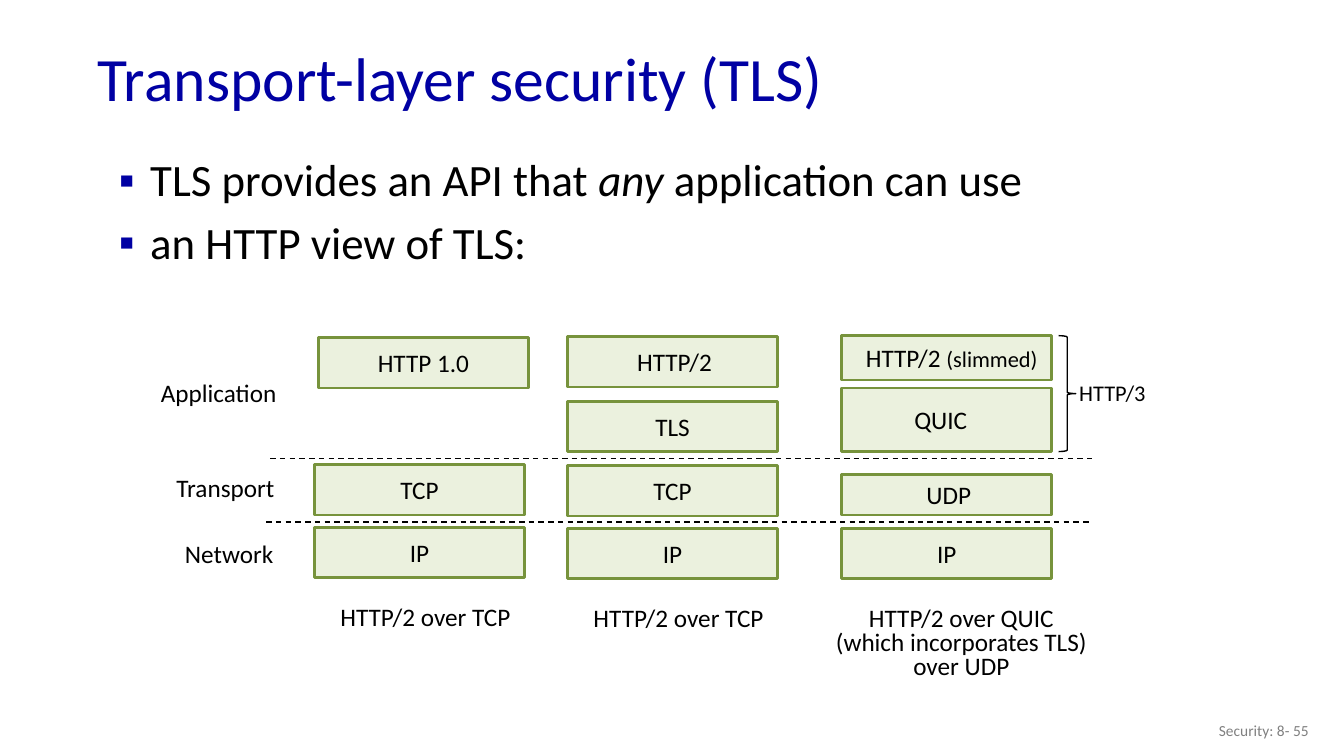
from lxml import etree
from pptx import Presentation
from pptx.dml.color import RGBColor
from pptx.enum.dml import MSO_LINE
from pptx.enum.shapes import MSO_CONNECTOR, MSO_SHAPE
from pptx.enum.text import MSO_ANCHOR, MSO_AUTO_SIZE, PP_ALIGN
from pptx.oxml.ns import qn
from pptx.util import Inches, Pt

NAVY = RGBColor(0x00, 0x00, 0xA3)
BLACK = RGBColor(0x00, 0x00, 0x00)
GRAY = RGBColor(0x80, 0x80, 0x80)
GREEN = RGBColor(0x77, 0x93, 0x3C)
PALE_GREEN = RGBColor(0xEB, 0xF1, 0xDE)
FONT = "Calibri"

# Content: runs are (text, size, italic)
TITLE = "Transport-layer security (TLS)"
BULLETS = [
    [("TLS provides an API that ", 32, False), ("any", 32, True),
     (" application can use", 32, False)],
    [("an HTTP view of TLS:", 32, False)],
]
FOOTER = "Security: 8- 55"
BOX_W = 2.08
# Protocol boxes: left, top, height, runs, sideways shift of the text
BOXES = [
    (3.16, 3.35, 0.5, [("HTTP 1.0", 18, False)], 0),
    (3.12, 4.61, 0.5, [("TCP", 18, False)], 0),
    (3.12, 5.23, 0.5, [("IP", 18, False)], 0),
    (5.63, 3.34, 0.5, [("HTTP/2", 18, False)], 0.02),
    (5.63, 3.98, 0.5, [("TLS", 18, False)], 0),
    (5.63, 4.62, 0.5, [("TCP", 18, False)], 0),
    (5.63, 5.24, 0.5, [("IP", 18, False)], 0),
    (8.35, 3.33, 0.44, [("HTTP/2 ", 18, False), ("(slimmed)", 16, False)], 0.05),
    (8.35, 3.85, 0.63, [("QUIC", 18, False)], -0.06),
    (8.35, 4.71, 0.4, [("UDP", 18, False)], 0.02),
    (8.35, 5.24, 0.5, [("IP", 18, False)], 0),
]
# Labels: text, left, top, width, height, size, alignment, line spacing
RIGHT, CENTER = PP_ALIGN.RIGHT, PP_ALIGN.CENTER
LABELS = [
    ("Application", 1.33, 3.69, 1.51, 0.4, 18, RIGHT, 1.0),
    ("Transport", 1.48, 4.64, 1.34, 0.4, 18, RIGHT, 1.0),
    ("Network", 1.47, 5.29, 1.34, 0.4, 18, RIGHT, 1.0),
    ("HTTP/3", 10.48, 3.71, 0.98, 0.37, 16, RIGHT, 1.0),
    ("HTTP/2 over TCP", 3.0, 5.92, 2.44, 0.4, 18, CENTER, 1.0),
    ("HTTP/2 over TCP", 5.51, 5.93, 2.44, 0.4, 18, CENTER, 1.0),
    ("HTTP/2 over QUIC\n(which incorporates TLS)\nover UDP",
     8.07, 5.98, 2.93, 0.83, 18, CENTER, 0.8),
]
LAYER_LINES = [(2.68, 10.83, 4.55), (2.64, 10.81, 5.18)]  # from x, to x, y
BRACE = (10.5, 3.33, 0.17, 1.15)


def inches(*values):
    return [Inches(v) for v in values]


def style(r, size, color=BLACK, italic=False):
    r.font.name, r.font.size, r.font.italic = FONT, Pt(size), italic
    r.font.color.rgb = color


def add_runs(p, runs):
    for text, size, italic in runs:
        r = p.add_run()
        r.text = text
        style(r, size, italic=italic)


def add_bullet(p):
    pPr = p._p.get_or_add_pPr()
    pPr.set("marL", str(Inches(0.31)))
    pPr.set("indent", str(-Inches(0.31)))
    clr = etree.SubElement(pPr, qn("a:buClr"))
    etree.SubElement(clr, qn("a:srgbClr")).set("val", str(NAVY))
    etree.SubElement(pPr, qn("a:buFont")).set("typeface", "Wingdings")
    pPr[-1].set("typeface", "Arial")
    etree.SubElement(pPr, qn("a:buChar")).set("char", "▪")


def add_label(slide, text, box, size, align, spacing=1.0, color=BLACK):
    tf = slide.shapes.add_textbox(*inches(*box)).text_frame
    tf.word_wrap = True
    tf.text = text
    for p in tf.paragraphs:
        p.alignment, p.line_spacing = align, spacing
        style(p.runs[0], size, color)
    return tf


def main():
    prs = Presentation()
    prs.slide_width, prs.slide_height = inches(13.33, 7.5)
    slide = prs.slides.add_slide(prs.slide_layouts[1])
    shapes = slide.shapes

    # Title and bullets
    title, body = slide.placeholders
    title.left, title.top, title.width, title.height = inches(0.87, 0.32, 11.5, 0.98)
    body.left, body.top, body.width, body.height = inches(1.08, 1.52, 11.9, 1.78)
    tf = title.text_frame
    tf.text = TITLE
    tf.vertical_anchor = MSO_ANCHOR.MIDDLE
    p = tf.paragraphs[0]
    p.alignment, p.line_spacing = PP_ALIGN.LEFT, 0.9
    style(p.runs[0], 44, NAVY)
    tf = body.text_frame
    for i, runs in enumerate(BULLETS):
        p = tf.add_paragraph() if i else tf.paragraphs[0]
        p.line_spacing, p.space_before = 0.9, Pt(10)
        add_bullet(p)
        add_runs(p, runs)
    for sp in (title, body):
        sp.text_frame.auto_size = MSO_AUTO_SIZE.NONE

    # Protocol stacks
    for left, top, height, runs, shift in BOXES:
        sp = shapes.add_shape(MSO_SHAPE.RECTANGLE, *inches(left, top, BOX_W, height))
        sp.shadow.inherit = False
        sp.fill.solid()
        sp.fill.fore_color.rgb = PALE_GREEN
        sp.line.color.rgb, sp.line.width = GREEN, Pt(2)
        tf = sp.text_frame
        tf.vertical_anchor = MSO_ANCHOR.MIDDLE
        tf.margin_top = tf.margin_bottom = 0
        tf.margin_left = Inches(max(0, 2 * shift))
        tf.margin_right = Inches(max(0, -2 * shift))
        tf.paragraphs[0].alignment = CENTER
        add_runs(tf.paragraphs[0], runs)

    # Dashed lines between layers
    for x1, x2, y in LAYER_LINES:
        line = shapes.add_connector(MSO_CONNECTOR.STRAIGHT, *inches(x1, y, x2, y))
        line.line.color.rgb, line.line.width = BLACK, Pt(1)
        line.line.dash_style = MSO_LINE.DASH
        etree.SubElement(line._element.spPr, qn("a:effectLst"))

    # HTTP/3 brace
    brace = shapes.add_shape(MSO_SHAPE.RIGHT_BRACE, *inches(*BRACE))
    brace.shadow.inherit = False
    brace.fill.background()
    brace.line.color.rgb, brace.line.width = BLACK, Pt(1)

    # Layer names, captions and footer
    for text, left, top, width, height, size, align, spacing in LABELS:
        add_label(slide, text, (left, top, width, height), size, align, spacing)
    tf = add_label(slide, FOOTER, (10.08, 7.05, 3, 0.4), 11, RIGHT, color=GRAY)
    tf.vertical_anchor = MSO_ANCHOR.MIDDLE

    prs.save("out.pptx")


if __name__ == "__main__":
    main()
